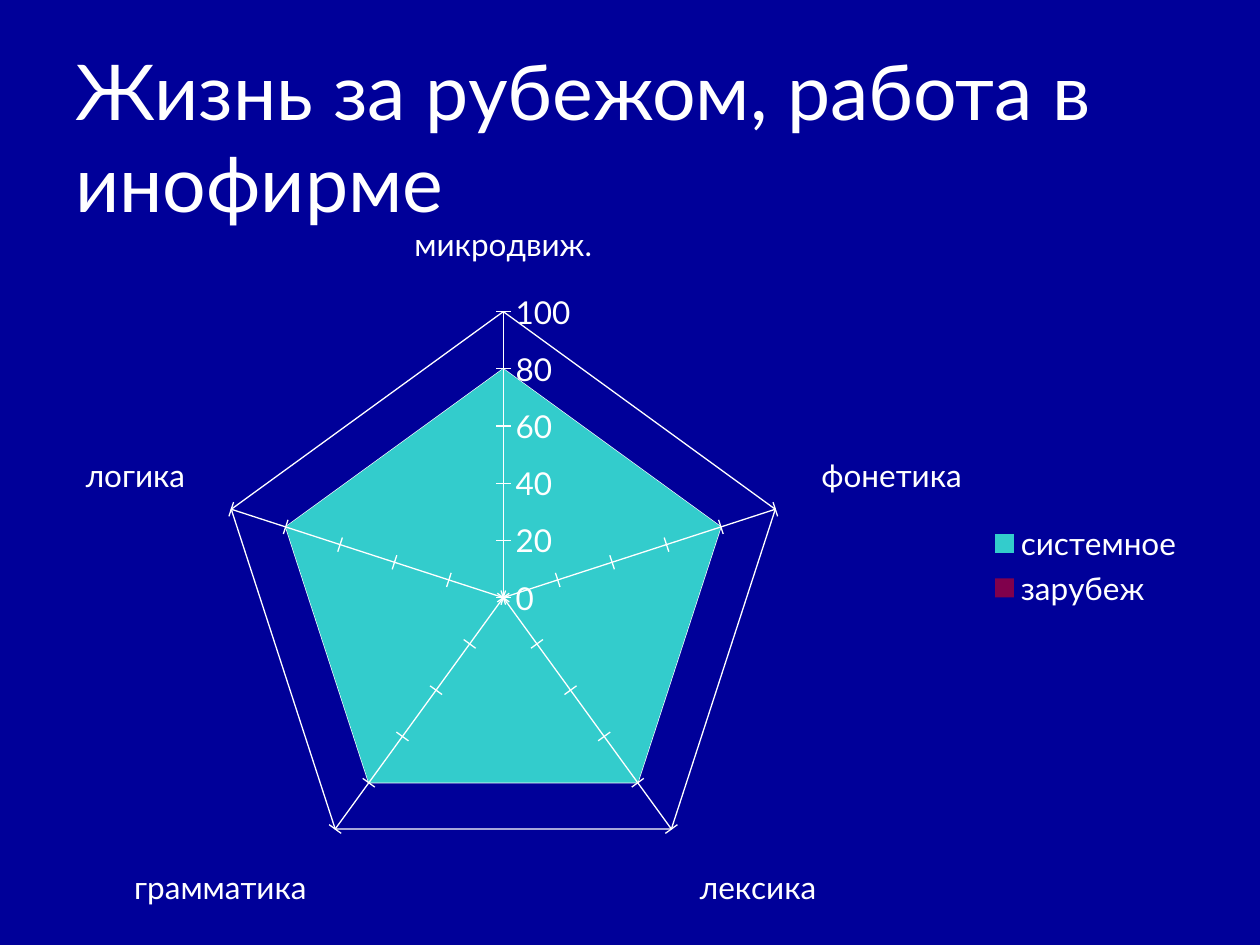
import pptx
import pptx.chart.data
import pptx.dml.color
import pptx.enum.chart
import pptx.enum.text
import pptx.oxml
import pptx.oxml.ns
import pptx.util
from pptx.util import Inches

COLORS = {"background": "000099", "text": "FFFFFF", "system": "33CCCC", "abroad": "FF0000"}
SKILLS = ["микродвиж.", "фонетика", "лексика", "грамматика", "логика"]
SERIES = [
    ("системное", [80, 80, 80, 80, 80], "system", 100),
    ("зарубеж", [70, 60, 70, 60, 80], "abroad", 50),
]


class SlideBuilder:
    font_name = "Lato"

    def __init__(self, deck):
        self.page = deck.slides.add_slide(deck.slide_layouts[6])
        self.paint(self.page.background.fill, "background")

    def color(self, name):
        return pptx.dml.color.RGBColor.from_string(COLORS[name])

    def paint(self, fill, name):
        fill.solid()
        fill.fore_color.rgb = self.color(name)

    def style_font(self, font, size):
        font.name = self.font_name
        font.size = pptx.util.Pt(size)
        font.color.rgb = self.color("text")

    def style_line(self, line):
        line.color.rgb = self.color("text")
        line.width = pptx.util.Pt(0.75)

    def title(self, text, left, top, width, height):
        box = self.page.shapes.add_textbox(Inches(left), Inches(top), Inches(width), Inches(height))
        frame = box.text_frame
        frame.word_wrap = True
        frame.vertical_anchor = pptx.enum.text.MSO_ANCHOR.MIDDLE
        para = frame.paragraphs[0]
        para.text = text
        self.style_font(para.font, 44)

    def radar(self, left, top, width, height):
        data = pptx.chart.data.CategoryChartData()
        data.categories = SKILLS
        for name, values, _, _ in SERIES:
            data.add_series(name, values)
        chart = self.page.shapes.add_chart(
            pptx.enum.chart.XL_CHART_TYPE.RADAR_FILLED,
            Inches(left), Inches(top), Inches(width), Inches(height), data,
        ).chart
        chart.has_title = False
        self.style_font(chart.font, 18)
        chart.has_legend = True
        chart.legend.position = pptx.enum.chart.XL_LEGEND_POSITION.RIGHT
        chart.legend.include_in_layout = False
        for axis in (chart.category_axis, chart.value_axis):
            axis.has_major_gridlines = True
            axis.major_tick_mark = pptx.enum.chart.XL_TICK_MARK.CROSS
            axis.minor_tick_mark = pptx.enum.chart.XL_TICK_MARK.NONE
            axis.tick_labels.number_format = "General"
            axis.tick_labels.number_format_is_linked = False
            self.style_line(axis.format.line)
            self.style_line(axis.major_gridlines.format.line)
        chart.value_axis.minimum_scale = 0
        chart.value_axis.maximum_scale = 100
        chart.value_axis.major_unit = 20
        plot = chart.plots[0]
        plot.vary_by_categories = False
        for series, (_, _, color, opacity) in zip(plot.series, SERIES):
            self.paint(series.format.fill, color)
            series.format.line.fill.background()
            if opacity < 100:
                self.set_opacity(series, opacity)

    def set_opacity(self, series, percent):
        tag = pptx.oxml.ns.qn("a:srgbClr")
        color = next(series.format.fill._xPr.iter(tag))
        alpha = pptx.oxml.parse_xml(
            f'<a:alpha {pptx.oxml.ns.nsdecls("a")} val="{percent * 1000}"/>'
        )
        color.append(alpha)


def main():
    deck = pptx.Presentation()
    deck.slide_width = Inches(10)
    deck.slide_height = Inches(7.5)
    builder = SlideBuilder(deck)
    builder.title("Жизнь за рубежом, работа в инофирме", 0.5, 0.32, 9, 1.51)
    builder.radar(0.5, 1.48, 9, 6.02)
    deck.save("out.pptx")


if __name__ == "__main__":
    main()
